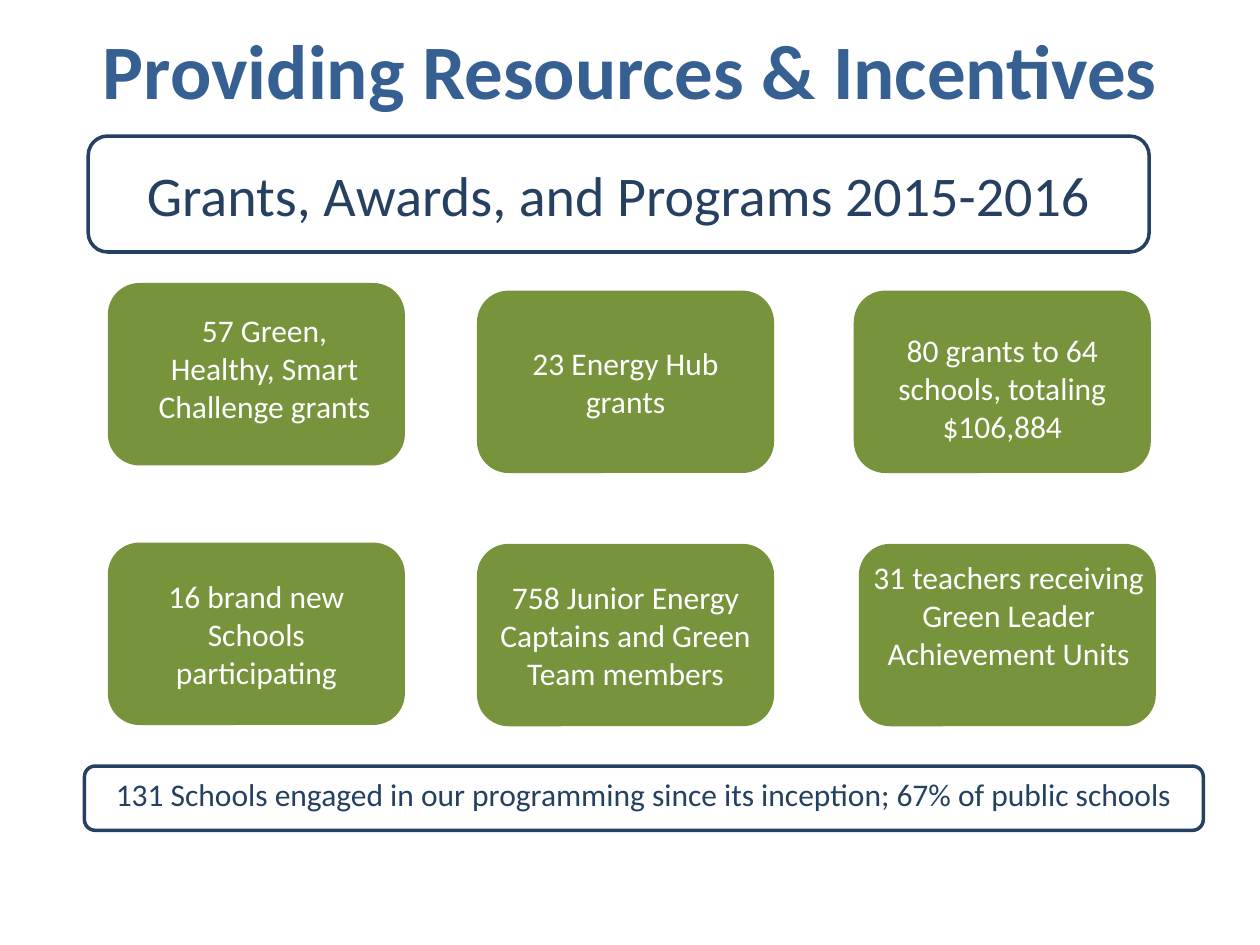
from pptx import Presentation, util as u
from pptx.dml.color import RGBColor
from pptx.enum import shapes, text

NAVY, BLUE, GREEN, WHITE = "254061", "376092", "77933C", "FFFFFF"
TOP, MIDDLE = text.MSO_ANCHOR.TOP, text.MSO_ANCHOR.MIDDLE

prs = Presentation()
prs.slide_width, prs.slide_height = u.Inches(10), u.Inches(7.5)
s = prs.slides.add_slide(prs.slide_layouts[6])


def write(sp, words, size, color, anchor=TOP, bold=False):
    tf = sp.text_frame
    tf.word_wrap = True
    tf.vertical_anchor = anchor
    p = tf.paragraphs[0]
    p.alignment = text.PP_ALIGN.CENTER
    r = p.add_run()
    r.text = words
    r.font.name, r.font.size, r.font.bold = "Calibri", u.Pt(size), bold
    r.font.color.rgb = RGBColor.from_string(color)


def rounded(box, line, fill=None):
    sp = s.shapes.add_shape(shapes.MSO_SHAPE.ROUNDED_RECTANGLE, *map(u.Inches, box))
    sp.shadow.inherit = False
    if fill:
        sp.fill.solid()
        sp.fill.fore_color.rgb = RGBColor.from_string(fill)
    else:
        sp.fill.background()
    sp.line.color.rgb = RGBColor.from_string(line)
    sp.line.width = u.Pt(2)
    return sp


# Heading
title = s.shapes.add_textbox(*map(u.Inches, (0.17, -0.08, 9.67, 1.25)))
write(title, "Providing Resources & Incentives", 44, BLUE, MIDDLE, bold=True)
banner = rounded((0.7, 1.08, 8.42, 0.92), NAVY)
write(banner, "Grants, Awards, and Programs 2015-2016", 32, NAVY, MIDDLE)

# Cards: column, row, nudge from the grid, words, separate label box if any
cols, rows = (0.87, 3.8, 6.79), (2.32, 4.33)
card_w, card_h = 2.33, 1.42
cards = [
    (0, 0, (0, -0.06), "57 Green, Healthy, Smart Challenge grants", (1.07, 2.42, 2.06, 1.31)),
    (1, 0, (0, 0), "23 Energy Hub grants", None),
    (2, 0, (0, 0), "80 grants to 64 schools, totaling $106,884", (6.91, 2.58, 2.09, 1.01)),
    (0, 1, (0, -0.01), "16 brand new Schools participating", None),
    (1, 1, (0, 0), "758 Junior Energy Captains and Green Team members", None),
    (2, 1, (0.04, 0), "31 teachers receiving Green Leader Achievement Units", (6.83, 4.38, 2.35, 1.31)),
]
for col, row, (dx, dy), words, label in cards:
    card = rounded((cols[col] + dx, rows[row] + dy, card_w, card_h), GREEN, GREEN)
    if label:
        write(s.shapes.add_textbox(*map(u.Inches, label)), words, 18, WHITE)
    else:
        write(card, words, 18, WHITE, MIDDLE)

# Summary bar
summary = rounded((0.67, 6.08, 8.88, 0.51), NAVY)
write(summary, "131 Schools engaged in our programming since its inception; "
      "67% of public schools", 18, NAVY)

prs.save("out.pptx")
